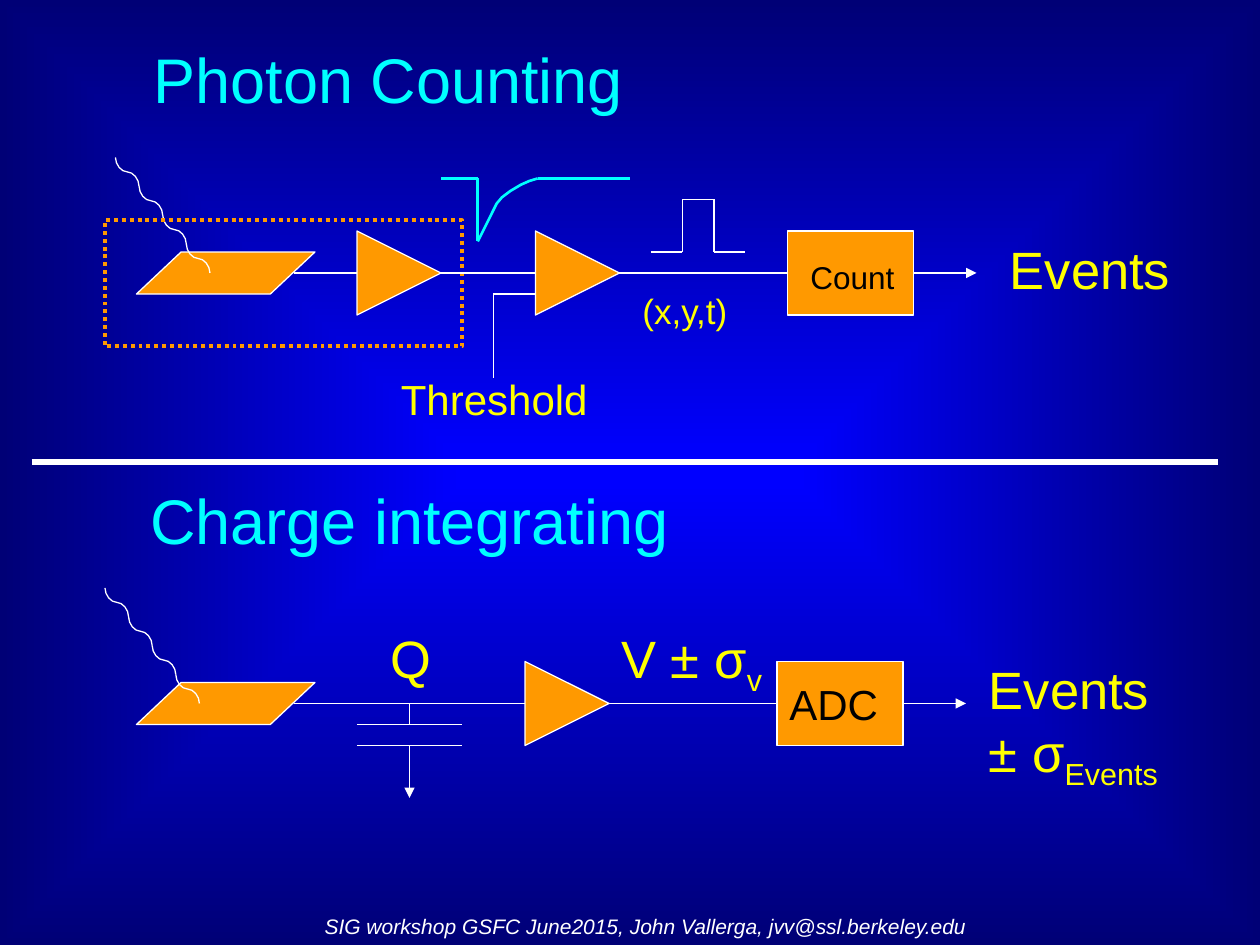
import dataclasses
import itertools
import typing

import lxml.etree
import pptx
import pptx.dml.color
import pptx.enum.dml
import pptx.enum.shapes
import pptx.enum.text
import pptx.oxml
import pptx.oxml.ns
import pptx.util

SHAPE = pptx.enum.shapes.MSO_SHAPE
CONN = pptx.enum.shapes.MSO_CONNECTOR
ALIGN = pptx.enum.text.PP_ALIGN
ANCHOR = pptx.enum.text.MSO_ANCHOR
qn = pptx.oxml.ns.qn
Point = tuple[float, float]


@dataclasses.dataclass(frozen=True)
class Theme:
    font: str = "Arial"
    center: str = "0000FF"
    edge: str = "000076"
    white: str = "FFFFFF"
    black: str = "000000"
    cyan: str = "00FFFF"
    yellow: str = "FFFF00"
    orange: str = "FF9900"
    title: float = 36
    result: float = 30
    label: float = 24
    coords: float = 20
    small: float = 18
    footer: float = 12
    thin: float = 0.75
    pulse: float = 1.5
    dotted: float = 2.25
    divider: float = 3


T = Theme()


class Label(typing.NamedTuple):
    lines: list[tuple[str, str]]
    box: tuple[float, float, float, float]
    size: float
    color: str = T.yellow
    align: typing.Any = ALIGN.LEFT
    anchor: typing.Any = ANCHOR.TOP
    italic: bool = False


class Wire(typing.NamedTuple):
    points: list[Point]
    arrow: bool = False
    color: str = T.white
    width: float = T.thin


class Part(typing.NamedTuple):
    kind: typing.Any
    x: float
    y: float
    w: float = 8
    h: float = 8
    rotation: float = 0
    adjust: float | None = None


def u(n: float) -> int:
    """Length of n twelfths of an inch."""
    return pptx.util.Cm(n * 2.54 / 12)


def rgb(color: str) -> pptx.dml.color.RGBColor:
    return pptx.dml.color.RGBColor.from_string(color)


def assign(obj: typing.Any, values: dict[str, typing.Any]) -> None:
    for name, value in values.items():
        setattr(obj, name, value)


def stroke(line: typing.Any, color: str, width: float) -> None:
    line.color.rgb = rgb(color)
    line.width = pptx.util.Pt(width)


def paint_background(s: typing.Any) -> None:
    fill = s.background.fill
    fill.gradient()
    for stop, color, pos in zip(fill.gradient_stops, (T.center, T.edge), (0.02, 1)):
        stop.color.rgb = rgb(color)
        stop.position = pos
    grad = s.element.find(".//" + qn("a:gradFill"))
    grad.remove(grad.find(qn("a:lin")))
    path = lxml.etree.SubElement(grad, qn("a:path"), path="rect")
    lxml.etree.SubElement(path, qn("a:fillToRect"), l="50000", t="50000", r="50000", b="50000")


def add_label(s: typing.Any, label: Label) -> None:
    tf = s.shapes.add_textbox(*map(u, label.box)).text_frame
    assign(tf, {"word_wrap": True, "vertical_anchor": label.anchor})
    for i, (text, sub) in enumerate(label.lines):
        p = tf.add_paragraph() if i else tf.paragraphs[0]
        p.alignment = label.align
        for part, baseline in ((text, 0), (sub, -25000)):
            if not part:
                continue
            r = p.add_run()
            r.text = part
            assign(r.font, {"name": T.font, "size": pptx.util.Pt(label.size), "italic": label.italic})
            r.font.color.rgb = rgb(label.color)
            if baseline:
                r._r.get_or_add_rPr().set("baseline", str(baseline))


def add_part(s: typing.Any, part: Part) -> typing.Any:
    sp = s.shapes.add_shape(part.kind, u(part.x), u(part.y), u(part.w), u(part.h))
    sp.shadow.inherit = False
    sp.rotation = part.rotation
    if part.adjust is not None:
        sp.adjustments[0] = part.adjust
    sp.fill.solid()
    sp.fill.fore_color.rgb = rgb(T.orange)
    stroke(sp.line, T.white, T.thin)
    return sp


def add_line(s: typing.Any, a: Point, b: Point, wire: Wire, kind: typing.Any = CONN.STRAIGHT) -> typing.Any:
    c = s.shapes.add_connector(kind, *map(u, (*a, *b)))
    stroke(c.line, wire.color, wire.width)
    sp_pr = c._element.spPr
    if wire.arrow:
        lxml.etree.SubElement(sp_pr.find(qn("a:ln")), qn("a:tailEnd"), type="triangle")
    lxml.etree.SubElement(sp_pr, qn("a:effectLst"))
    return c


def add_wire(s: typing.Any, wire: Wire) -> None:
    for a, b in itertools.pairwise(wire.points):
        add_line(s, a, b, wire)


def add_photon(s: typing.Any, x: float, y: float) -> None:
    dx, dy = 2.25, 2.75
    for i in range(4):
        cx, cy = x + (i + 0.5) * dx, y + (i + 0.5) * dy
        start, end = (cx - dy / 2, cy + dx / 2), (cx + dy / 2, cy - dx / 2)
        c = add_line(s, start, end, Wire([]), CONN.CURVE)
        c._element.spPr.find(qn("a:xfrm")).set("rot", "5400000")


def add_stage(s: typing.Any, x: float, mid: float, amp_x: float, photon_x: float) -> None:
    add_part(s, Part(SHAPE.PARALLELOGRAM, 13, mid - 2, 17, 4, adjust=1.062))
    add_part(s, Part(SHAPE.ISOSCELES_TRIANGLE, amp_x, mid - 4, rotation=90))
    box = add_part(s, Part(SHAPE.RECTANGLE, x, mid - 4, 12))
    add_line(s, (amp_x + 8, mid), (x, mid), Wire([])).end_connect(box, 1)
    add_line(s, (x + 12, mid), (x + 18, mid), Wire([], arrow=True)).begin_connect(box, 3)
    add_photon(s, photon_x, mid - 11)


def add_detector_frame(s: typing.Any) -> None:
    sp = s.shapes.add_shape(SHAPE.RECTANGLE, u(10), u(21), u(34), u(12))
    sp.shadow.inherit = False
    sp.fill.background()
    stroke(sp.line, T.orange, T.dotted)
    sp.line.dash_style = pptx.enum.dml.MSO_LINE.ROUND_DOT


def add_decay(s: typing.Any) -> None:
    points = [(45.5, 23), (46.7, 20.6), (47.3, 19.4), (47.8, 18.8), (48.6, 18.2),
              (49.6, 17.6), (50.4, 17.25), (51.2, 17)]
    first, *rest = [(u(x), u(y)) for x, y in points]
    fb = s.shapes.build_freeform(*first)
    fb.add_line_segments(rest, close=False)
    sp = fb.convert_to_shape()
    sp.shadow.inherit = False
    sp.fill.background()
    stroke(sp.line, T.cyan, T.pulse)


WIRES = [
    Wire([(28, 26), (34, 26)]),
    Wire([(42, 26), (51, 26)]),
    Wire([(51, 28), (47, 28), (47, 36)]),
    Wire([(62, 24), (65, 24), (65, 19), (68, 19), (68, 24), (71, 24)]),
    Wire([(42, 17), (45.5, 17), (45.5, 23)], color=T.cyan, width=T.pulse),
    Wire([(51.2, 17), (60, 17)], color=T.cyan, width=T.pulse),
    Wire([(3, 44), (116, 44)], width=T.divider),
    Wire([(28, 67), (39, 67), (50, 67)]),
    Wire([(39, 67), (39, 69)]),
    Wire([(34, 69), (44, 69)]),
    Wire([(34, 71), (44, 71)]),
    Wire([(39, 71), (39, 76)], arrow=True),
]

LABELS = [
    Label([("SIG workshop GSFC June2015, John Vallerga, jvv@ssl.berkeley.edu", "")],
          (13, 86.4, 97, 3.6), T.footer, T.white, ALIGN.CENTER, italic=True),
    Label([("Photon Counting", "")], (9, 2, 56, 11), T.title, T.cyan, ALIGN.CENTER, ANCHOR.MIDDLE),
    Label([("Charge integrating", "")], (11, 44, 56, 11), T.title, T.cyan, ALIGN.CENTER, ANCHOR.MIDDLE),
    Label([("Threshold", "")], (37, 35, 29, 6), T.label),
    Label([("(x,y,t)", "")], (60, 27, 13, 5.2), T.coords),
    Label([("Count", "")], (76, 24, 11, 4.8), T.small, T.black),
    Label([("Events", "")], (95, 22, 20, 7.2), T.result),
    Label([("Q", "")], (36, 59, 7, 7.2), T.result),
    Label([("V ± σ", "v")], (58, 59, 18, 7.2), T.result),
    Label([("ADC", "")], (74, 64, 11, 6), T.label, T.black),
    Label([("Events", ""), ("± σ", "Events")], (93, 62, 22, 13.2), T.result),
]


def main() -> None:
    prs = pptx.Presentation()
    assign(prs, {"slide_width": u(120), "slide_height": u(90)})
    s = prs.slides.add_slide(prs.slide_layouts[6])
    paint_background(s)
    add_stage(s, x=75, mid=26, amp_x=51, photon_x=11)
    add_part(s, Part(SHAPE.ISOSCELES_TRIANGLE, 34, 22, rotation=90))
    add_stage(s, x=74, mid=67, amp_x=50, photon_x=10)
    add_detector_frame(s)
    for wire in WIRES:
        add_wire(s, wire)
    add_decay(s)
    for label in LABELS:
        add_label(s, label)
    prs.save("out.pptx")


if __name__ == "__main__":
    main()
